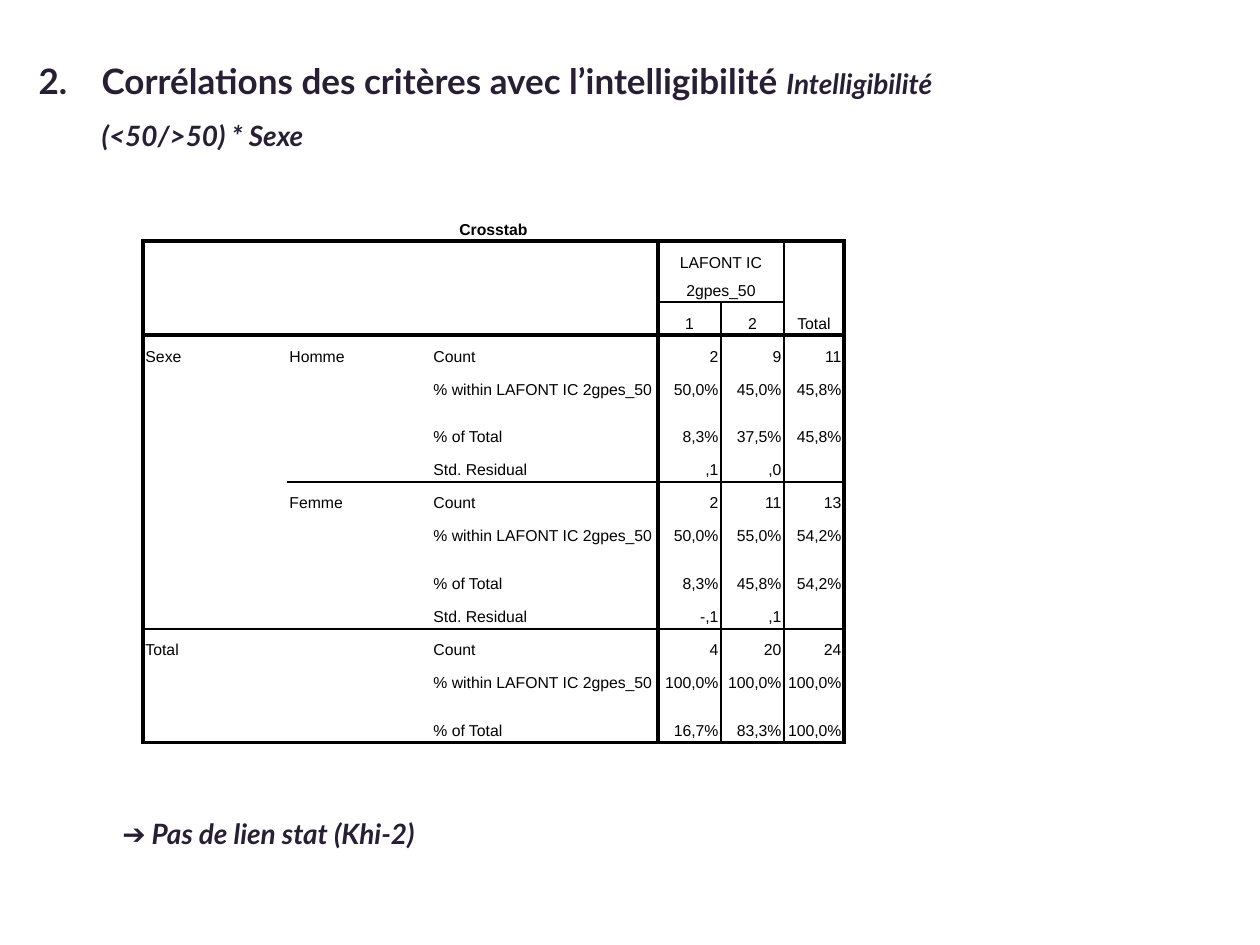
from lxml import etree
from pptx import Presentation, util as u
from pptx.dml.color import RGBColor
from pptx.enum import text as t
from pptx.oxml import ns

PX_PER_INCH = 126
INK = RGBColor(0x29, 0x1F, 0x35)
BLACK = RGBColor(0, 0, 0)
WHITE = RGBColor(0xFF, 0xFF, 0xFF)
THICK, THIN = 2.25, 1
NO_STYLE = "{2D5ABB26-0587-4C30-8999-92F81FD0307C}"

COLUMNS = [144, 144, 227, 63, 63, 60]
LINE, TWO_LINES, TALL = 33, 61, 48
GROUP = [LINE, TALL, LINE]
ROWS = [LINE, TWO_LINES, LINE, *GROUP, LINE, *GROUP, LINE, *GROUP]
LABELS = ["Count", "% within LAFONT IC 2gpes_50", "% of Total", "Std. Residual"]
VALUES = [
    ["2", "9", "11"],
    ["50,0%", "45,0%", "45,8%"],
    ["8,3%", "37,5%", "45,8%"],
    [",1", ",0", ""],
    ["2", "11", "13"],
    ["50,0%", "55,0%", "54,2%"],
    ["8,3%", "45,8%", "54,2%"],
    ["-,1", ",1", ""],
    ["4", "20", "24"],
    ["100,0%", "100,0%", "100,0%"],
    ["16,7%", "83,3%", "100,0%"],
]
HEADINGS = {
    (0, 0): "Crosstab", (1, 3): "LAFONT IC 2gpes_50", (1, 5): "Total",
    (2, 3): "1", (2, 4): "2",
    (3, 0): "Sexe", (3, 1): "Homme", (7, 1): "Femme", (11, 0): "Total",
}
MERGES = [
    (0, 0, 0, 5), (1, 3, 1, 4), (1, 5, 2, 5), (3, 0, 10, 0),
    (3, 1, 6, 1), (7, 1, 10, 1), (11, 0, 13, 1),
]
# Rules above each row: width, first column, last column
ROW_RULES = {
    1: (THICK, 0, 5), 2: (THIN, 3, 4), 3: (THICK, 0, 5),
    7: (THIN, 1, 5), 11: (THIN, 0, 5), 14: (THICK, 0, 5),
}
COLUMN_RULES = {0: THICK, 3: THICK, 4: THIN, 5: THIN, 6: THICK}


def px(length):
    return u.Emu(round(length * 914400 / PX_PER_INCH))


def place(shape, left, top, width, height):
    shape.left, shape.top = px(left), px(top)
    shape.width, shape.height = px(width), px(height)


def add_text(para, words, *, size, font="Lato", color=INK, bold=True, italic=False):
    span = para.add_run()
    span.text = words
    span.font.name, span.font.size = font, u.Pt(size)
    span.font.color.rgb = color
    span.font.bold, span.font.italic = bold, italic


def add_title(page):
    title = page.shapes.title
    place(title, 26, 32, 948, 190)
    frame = title.text_frame
    frame.word_wrap = True
    frame.auto_size = t.MSO_AUTO_SIZE.NONE
    frame.vertical_anchor = t.MSO_ANCHOR.TOP
    para = frame.paragraphs[0]
    para.alignment = t.PP_ALIGN.LEFT
    para.line_spacing = 1.5
    indent = px(63)
    properties = para._p.get_or_add_pPr()
    properties.set("marL", str(indent))
    properties.set("indent", str(-indent))
    add_text(para, "2.\tCorrélations des critères avec l’intelligibilité ", size=20)
    add_text(para, "Intelligibilité (<50/>50) * Sexe", size=16, italic=True)


def add_conclusion(page):
    box = page.shapes.add_textbox(px(110), px(810), px(392), px(47))
    box.text_frame.word_wrap = False
    add_text(box.text_frame.paragraphs[0], "➔ Pas de lien stat (Khi-2)",
             size=16, italic=True)


def row_rule(edge, column):
    width, first, last = ROW_RULES.get(edge, (None, 0, 0))
    return width if first <= column <= last else None


def draw_borders(cell, row, column):
    """Border the whole merged area that starts at this cell."""
    widths = {
        "L": COLUMN_RULES.get(column) if row else None,
        "R": COLUMN_RULES.get(column + cell.span_width) if row else None,
        "T": row_rule(row, column),
        "B": row_rule(row + cell.span_height, column),
    }
    properties = cell._tc.get_or_add_tcPr()
    for side, width in widths.items():
        line = etree.SubElement(properties, ns.qn(f"a:ln{side}"))
        if width:
            line.set("w", str(u.Pt(width)))
            fill = etree.SubElement(line, ns.qn("a:solidFill"))
            etree.SubElement(fill, ns.qn("a:srgbClr"), val=str(BLACK))
        else:
            etree.SubElement(line, ns.qn("a:noFill"))


def cell_words(row, column):
    if (row, column) in HEADINGS:
        return HEADINGS[row, column]
    if row < 3 or column < 2:
        return ""
    if column == 2:
        return LABELS[(row - 3) % 4]
    return VALUES[row - 3][column - 3]


def format_cell(cell, row, column):
    if not cell.is_spanned:
        draw_borders(cell, row, column)
    cell.fill.solid()
    cell.fill.fore_color.rgb = WHITE
    cell.margin_left = cell.margin_right = u.Inches(0.02)
    cell.margin_top = cell.margin_bottom = u.Inches(0.02)
    para = cell.text_frame.paragraphs[0]
    para.line_spacing = u.Pt(16)
    if row < 3:
        cell.vertical_anchor = t.MSO_ANCHOR.BOTTOM if row else t.MSO_ANCHOR.MIDDLE
        para.alignment = t.PP_ALIGN.CENTER
    else:
        cell.vertical_anchor = t.MSO_ANCHOR.TOP
        para.alignment = t.PP_ALIGN.RIGHT if column > 2 else t.PP_ALIGN.LEFT
    words = cell_words(row, column)
    if words:
        add_text(para, words, size=9, font="Arial", color=BLACK, bold=row == 0)
    else:
        etree.SubElement(para._p, ns.qn("a:endParaRPr"), sz="900")


def add_crosstab(page):
    frame = page.shapes.add_table(len(ROWS), len(COLUMNS), px(143), px(208),
                                  px(sum(COLUMNS)), px(sum(ROWS)))
    table = frame.table
    table.first_row = table.horz_banding = False
    table._tbl.tblPr.find(ns.qn("a:tableStyleId")).text = NO_STYLE
    for column, width in zip(table.columns, COLUMNS):
        column.width = px(width)
    for row, height in zip(table.rows, ROWS):
        row.height = px(height)
    for top, left, bottom, right in MERGES:
        table.cell(top, left).merge(table.cell(bottom, right))
    for row in range(len(ROWS)):
        for column in range(len(COLUMNS)):
            format_cell(table.cell(row, column), row, column)


def main():
    deck = Presentation()
    deck.slide_width, deck.slide_height = u.Inches(10), u.Inches(7.5)
    page = deck.slides.add_slide(deck.slide_layouts[5])
    add_title(page)
    add_conclusion(page)
    add_crosstab(page)
    deck.save("out.pptx")


if __name__ == "__main__":
    main()
